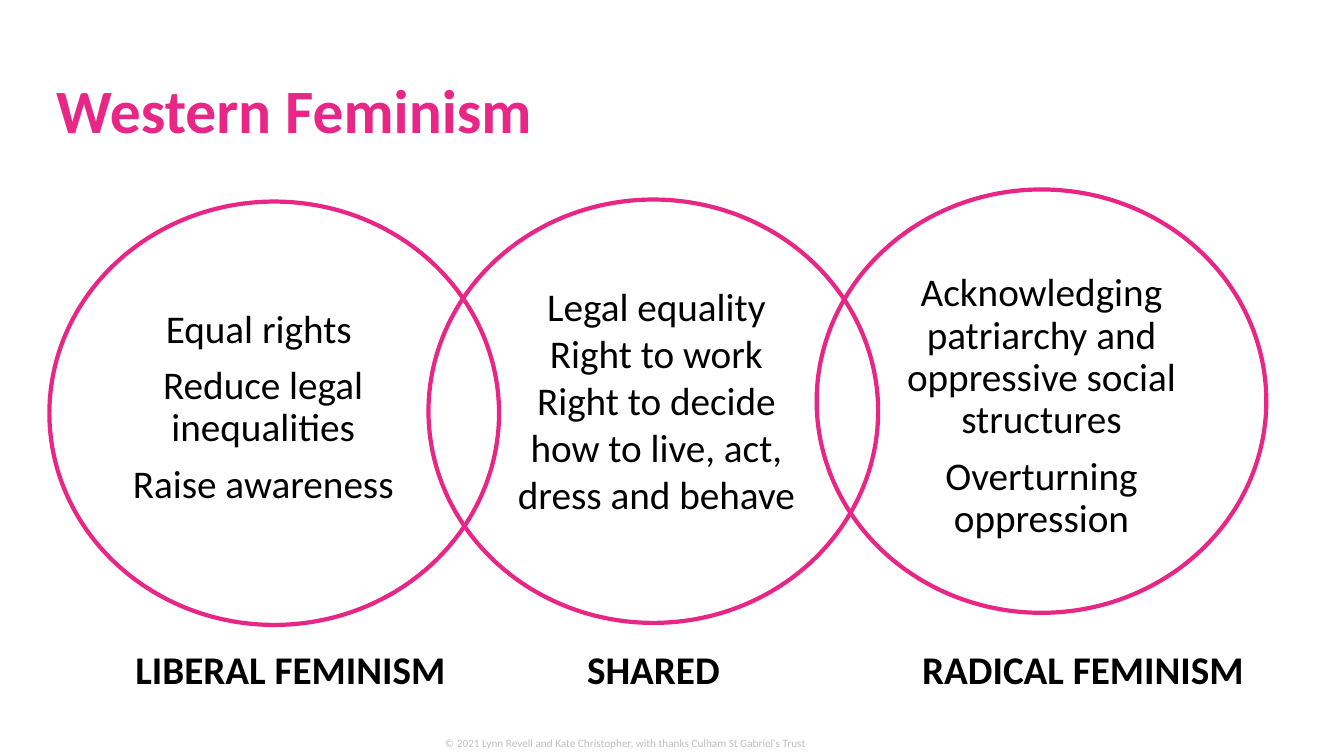
from dataclasses import dataclass

import pptx
import pptx.dml.color
import pptx.enum.shapes
import pptx.enum.text
import pptx.util
from pptx.util import Inches

FONT = "Calibri"
PINK = "E72686"
BLACK = "000000"
GREY = "BFBFBF"
CIRCLE_WIDTH, CIRCLE_HEIGHT = 4.46, 4.2
LABEL_TOP, LABEL_WIDTH, LABEL_HEIGHT = 6.35, 4.72, 0.57
CENTER = pptx.enum.text.PP_ALIGN.CENTER
LEFT = pptx.enum.text.PP_ALIGN.LEFT


@dataclass
class TextStyle:
    size: float = 28
    color: str = BLACK
    bold: bool = False
    align: pptx.enum.text.PP_ALIGN = CENTER
    line_spacing: float = 1.0
    gap: float = 0
    anchor: pptx.enum.text.MSO_ANCHOR = pptx.enum.text.MSO_ANCHOR.TOP


@dataclass
class Group:
    label: str
    label_left: float
    circle_left: float
    circle_top: float
    text_area: tuple[float, float, float, float]
    ideas: list[str]
    style: TextStyle


FOOTER = TextStyle(size=8, color=GREY)
TITLE = TextStyle(size=44, color=PINK, bold=True, align=LEFT, line_spacing=0.9,
                  anchor=pptx.enum.text.MSO_ANCHOR.MIDDLE)
LABEL = TextStyle(bold=True)
SPACED = TextStyle(line_spacing=0.9, gap=10)

GROUPS = [
    Group("LIBERAL FEMINISM", 0.52, 0.49, 2.0, (0.87, 3.02, 3.48, 2.59),
          ["Equal rights ", "Reduce legal inequalities", "Raise awareness"], SPACED),
    Group("RADICAL FEMINISM", 8.38, 8.1, 1.88, (8.43, 2.66, 3.8, 3.3),
          ["Acknowledging patriarchy and oppressive social structures",
           "Overturning oppression"], SPACED),
    Group("SHARED", 4.12, 4.25, 1.98, (5.02, 2.75, 2.98, 2.46),
          ["Legal equality", "Right to work",
           "Right to decide how to live, act, dress and behave"], TextStyle()),
]


def rgb(value: str) -> pptx.dml.color.RGBColor:
    return pptx.dml.color.RGBColor.from_string(value)


def add_text(page, area: tuple[float, float, float, float],
             lines: list[str], style: TextStyle) -> None:
    box = page.shapes.add_textbox(*map(Inches, area))
    frame = box.text_frame
    frame.word_wrap = True
    frame.vertical_anchor = style.anchor
    frame.text = "\n".join(lines)
    for index, para in enumerate(frame.paragraphs):
        para.alignment = style.align
        para.line_spacing = style.line_spacing
        if index:
            para.space_before = pptx.util.Pt(style.gap)
        for span in para.runs:
            span.font.name = FONT
            span.font.size = pptx.util.Pt(style.size)
            span.font.bold = style.bold
            span.font.color.rgb = rgb(style.color)


def add_circle(page, left: float, top: float) -> None:
    circle = page.shapes.add_shape(
        pptx.enum.shapes.MSO_SHAPE.OVAL, Inches(left), Inches(top),
        Inches(CIRCLE_WIDTH), Inches(CIRCLE_HEIGHT))
    circle.shadow.inherit = False
    circle.fill.background()
    circle.line.color.rgb = rgb(PINK)
    circle.line.width = pptx.util.Pt(3)


def main() -> None:
    deck = pptx.Presentation()
    deck.slide_width = Inches(13.33)
    deck.slide_height = Inches(7.5)
    page = deck.slides.add_slide(deck.slide_layouts[6])

    add_text(page, (2.87, 7.26, 6.67, 0.24),
             ["© 2021 Lynn Revell and Kate Christopher, "
              "with thanks Culham St Gabriel's Trust"], FOOTER)
    add_text(page, (0.46, 0.4, 11.5, 1.45), ["Western Feminism"], TITLE)
    for group in GROUPS:
        add_circle(page, group.circle_left, group.circle_top)
        add_text(page, group.text_area, group.ideas, group.style)
        add_text(page, (group.label_left, LABEL_TOP, LABEL_WIDTH, LABEL_HEIGHT),
                 [group.label], LABEL)

    deck.save("out.pptx")


if __name__ == "__main__":
    main()
